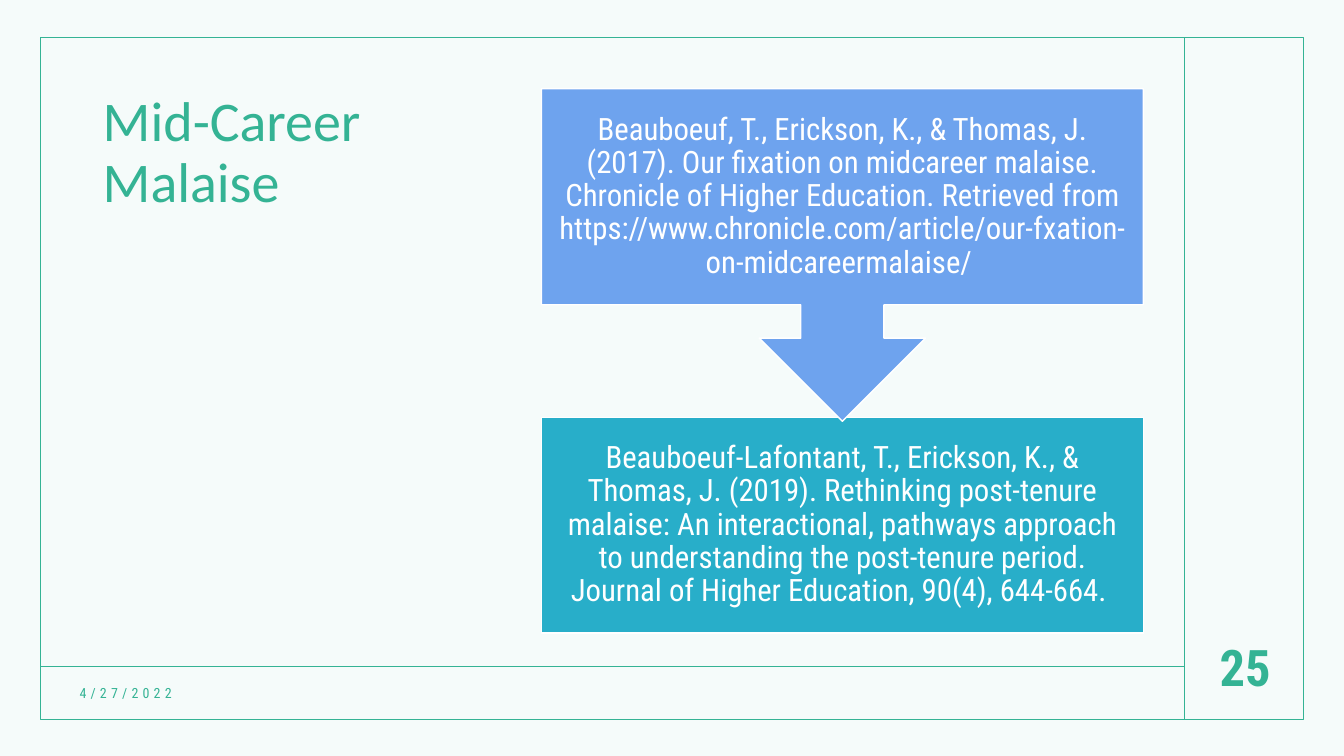
from pptx import Presentation
from pptx.dml.color import RGBColor
from pptx.enum import shapes, text
from pptx.util import Inches, Pt
from lxml import etree

TITLE = "Mid-Career Malaise"
DATE = "4/27/2022"
PAGE_NUMBER = "25"
# Trailing spaces belong to the centred citations.
EARLIER = ("Beauboeuf, T., Erickson, K., & Thomas, J. (2017). Our fixation on midcareer malaise. "
           "Chronicle of Higher Education. Retrieved from "
           "https://www.chronicle.com/article/our-fxation-on-midcareermalaise/ ")
LATER = ("Beauboeuf-Lafontant, T., Erickson, K., & Thomas, J. (2019). Rethinking post-tenure malaise: "
         "An interactional, pathways approach to understanding the post-tenure period. "
         "Journal of Higher Education, 90(4), 644-664. ")

THEME = {
    "paper": "F5FBFA", "green": "34B394", "blue": "6EA3EE", "teal": "28AEC9", "white": "FFFFFF",
    "heading": "Calibri", "body": "Roboto Condensed",
    "title_size": 40, "number_size": 36, "citation_size": 22, "date_size": 10,
}

FRAME = (0.4, 0.37, 12.53, 6.77)
RULE_X, RULE_Y = 11.75, 6.61
CITATION_LEFT, CITATION_WIDTH = 5.37, 5.97
# text, shape, top, height, fill
CITATIONS = [
    (LATER, shapes.MSO_SHAPE.RECTANGLE, 4.14, 2.14, "teal"),
    (EARLIER, shapes.MSO_SHAPE.DOWN_ARROW_CALLOUT, 0.88, 3.3, "blue"),
]


def color(name):
    return RGBColor.from_string(THEME[name])


def write(box, words, *, size, font="body", ink="green", bold=False, align="LEFT",
          anchor="MIDDLE", line_spacing=1.0, inset=None, tracking=None):
    frame = box.text_frame
    frame.word_wrap = True
    frame.vertical_anchor = text.MSO_ANCHOR[anchor]
    if inset is not None:
        frame.margin_left = frame.margin_right = Inches(inset)
        frame.margin_top = frame.margin_bottom = Inches(inset)
    para = frame.paragraphs[0]
    para.alignment = text.PP_ALIGN[align]
    para.line_spacing = line_spacing
    span = para.add_run()
    span.text = words
    span.font.name = THEME[font]
    span.font.size = Pt(THEME[size])
    span.font.bold = bold
    span.font.color.rgb = color(ink)
    if tracking:
        span.font._element.set("spc", str(tracking * 100))


def add_text(page, place, words, **style):
    box = page.shapes.add_textbox(*map(Inches, place))
    write(box, words, **style)


def add_block(page, kind, place, *, fill=None, line):
    block = page.shapes.add_shape(kind, *map(Inches, place))
    block.shadow.inherit = False
    if fill:
        block.fill.solid()
        block.fill.fore_color.rgb = color(fill)
    else:
        block.fill.background()
    block.line.color.rgb = color(line)
    block.line.width = Pt(1)
    return block


def add_rule(page, *ends):
    rule = page.shapes.add_connector(shapes.MSO_CONNECTOR.STRAIGHT, *map(Inches, ends))
    rule.line.color.rgb = color("green")
    rule.line.width = Pt(1)
    etree.SubElement(rule._element.spPr,
                     "{http://schemas.openxmlformats.org/drawingml/2006/main}effectLst")


def main():
    deck = Presentation()
    deck.slide_width, deck.slide_height = Inches(13.33), Inches(7.5)
    page = deck.slides.add_slide(deck.slide_layouts[6])
    page.background.fill.solid()
    page.background.fill.fore_color.rgb = color("paper")

    left, top, _, height = FRAME
    add_block(page, shapes.MSO_SHAPE.RECTANGLE, FRAME, line="green")
    add_text(page, (0.92, 0.88, 4.45, 5.33), TITLE, size="title_size", font="heading",
             anchor="TOP", line_spacing=0.9)
    add_rule(page, RULE_X, top, RULE_X, top + height)
    add_rule(page, left, RULE_Y, RULE_X, RULE_Y)
    add_text(page, (0.69, 6.72, 3.45, 0.31), DATE, size="date_size", tracking=3)
    add_text(page, (11.83, 6.2, 1.04, 0.83), PAGE_NUMBER, size="number_size", bold=True,
             align="CENTER")

    for words, kind, block_top, block_height, fill in CITATIONS:
        place = (CITATION_LEFT, block_top, CITATION_WIDTH, block_height)
        block = add_block(page, kind, place, fill=fill, line="white")
        write(block, words, size="citation_size", ink="white", align="CENTER",
              line_spacing=0.9, inset=0.17)

    deck.save("out.pptx")


if __name__ == "__main__":
    main()
